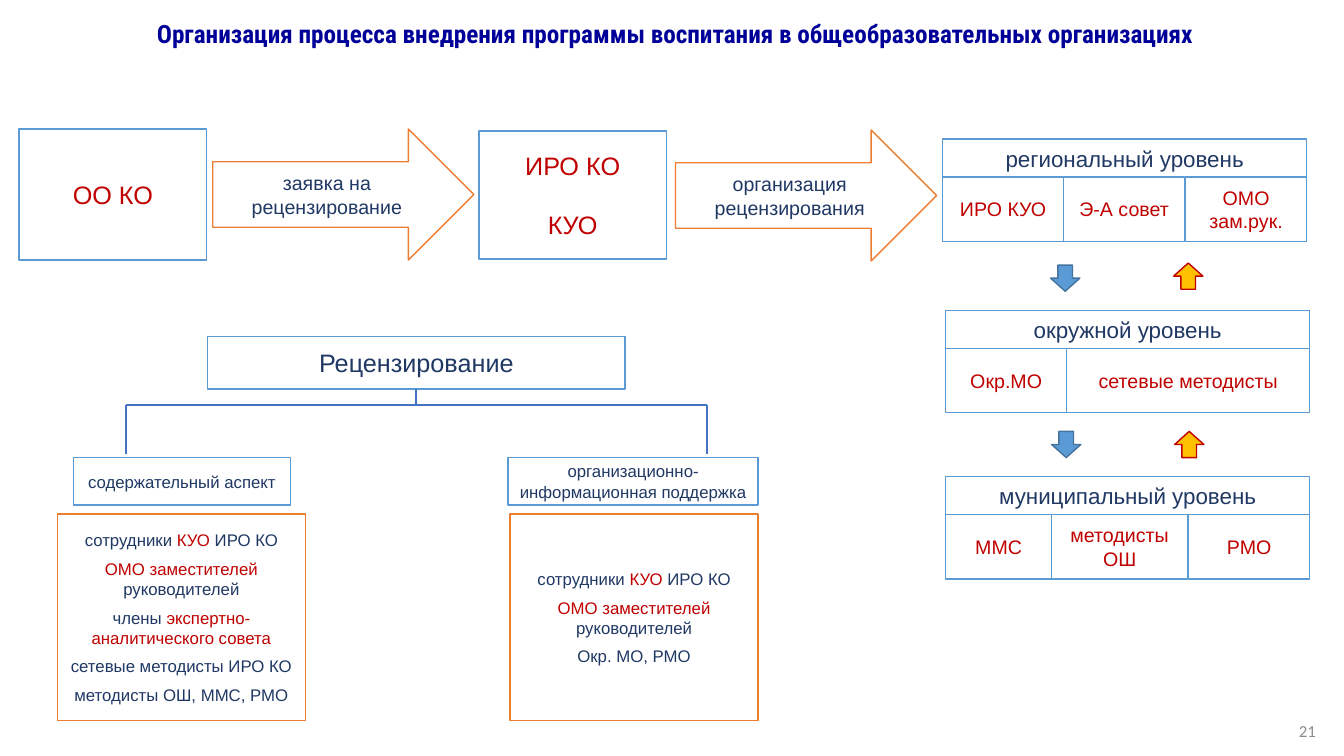
import pptx
import pptx.util
import pptx.dml.color
import pptx.enum.shapes
import pptx.enum.text
import pptx.oxml
import pptx.oxml.ns
from dataclasses import dataclass

Inches = pptx.util.Inches
Kind = pptx.enum.shapes.MSO_SHAPE
Align = pptx.enum.text.PP_ALIGN
Anchor = pptx.enum.text.MSO_ANCHOR


@dataclass(frozen=True)
class Theme:
    white: str = "FFFFFF"
    blue: str = "5B9BD5"
    edge: str = "43739E"
    link: str = "4472C4"
    orange: str = "ED7D31"
    gold: str = "FFC000"
    red: str = "C00000"
    navy: str = "203864"
    head: str = "000099"
    gray: str = "8C8C8C"
    font: str = "Arial"
    headfont: str = "Roboto Condensed"
    numfont: str = "Calibri"
    big: int = 18
    mid: int = 16
    body: int = 14
    small: int = 12


class Board:
    def __init__(self, slide, theme):
        self.slide = slide
        self.theme = theme

    def color(self, code):
        return pptx.dml.color.RGBColor.from_string(code)

    def style(self, run, size, code, font=None, bold=False):
        run.font.size = pptx.util.Pt(size)
        run.font.name = font or self.theme.font
        run.font.bold = bold
        run.font.color.rgb = self.color(code)

    def title(self, text, left, top, width, height):
        box = self.slide.shapes.title
        box.left, box.top = Inches(left), Inches(top)
        box.width, box.height = Inches(width), Inches(height)
        frame = box.text_frame
        frame.text = text
        frame.word_wrap = True
        frame.vertical_anchor = Anchor.TOP
        para = frame.paragraphs[0]
        para.alignment = Align.CENTER
        para.line_spacing = 1.0
        self.style(para.runs[0], self.theme.big, self.theme.head, self.theme.headfont, True)

    def number(self, text, left, top, width, height):
        box = self.slide.shapes.add_textbox(*map(Inches, (left, top, width, height)))
        frame = box.text_frame
        frame.text = text
        frame.word_wrap = True
        frame.vertical_anchor = Anchor.MIDDLE
        frame.paragraphs[0].alignment = Align.RIGHT
        self.style(frame.paragraphs[0].runs[0], self.theme.small, self.theme.gray, self.theme.numfont)

    def shape(self, kind, left, top, width, height, fill, line):
        item = self.slide.shapes.add_shape(kind, *map(Inches, (left, top, width, height)))
        item.shadow.inherit = False
        item.fill.solid()
        item.fill.fore_color.rgb = self.color(fill)
        item.line.color.rgb = self.color(line)
        item.line.width = pptx.util.Pt(1)
        return item

    def label(self, text, left, top, width, height, size, code, kind=Kind.RECTANGLE, line=None, gap=0):
        item = self.shape(kind, left, top, width, height, self.theme.white, line or self.theme.blue)
        frame = item.text_frame
        frame.text = text
        frame.word_wrap = True
        frame.vertical_anchor = Anchor.MIDDLE
        for index, para in enumerate(frame.paragraphs):
            para.alignment = Align.CENTER
            para.space_before = pptx.util.Pt(gap if index else 0)
            self.style(para.runs[0], size, code)
        return item

    def staff(self, rows, left, top, width, height):
        item = self.shape(Kind.RECTANGLE, left, top, width, height, self.theme.white, self.theme.orange)
        frame = item.text_frame
        frame.word_wrap = True
        frame.vertical_anchor = Anchor.MIDDLE
        for index, row in enumerate(rows):
            para = frame.add_paragraph() if index else frame.paragraphs[0]
            para.alignment = Align.CENTER
            para.space_after = pptx.util.Pt(6)
            for place, part in enumerate(row.split("|")):
                if part:
                    run = para.add_run()
                    run.text = part
                    self.style(run, self.theme.small, self.theme.red if place % 2 else self.theme.navy)

    def level(self, name, left, top, cells):
        self.label(name, left, top, 3.61, 0.38, self.theme.mid, self.theme.navy)
        for text, shift, width in cells:
            self.label(text, left + shift, top + 0.375, width, 0.64, self.theme.body, self.theme.red)

    def line(self, start, end, source=None):
        item = self.slide.shapes.add_connector(
            pptx.enum.shapes.MSO_CONNECTOR.STRAIGHT, *map(Inches, start + end))
        item.line.color.rgb = self.color(self.theme.link)
        item.line.width = pptx.util.Pt(1.5)
        props = item._element.spPr
        props.append(pptx.oxml.parse_xml("<a:effectLst %s/>" % pptx.oxml.ns.nsdecls("a")))
        if source is not None:
            item.begin_connect(source, 2)


def main():
    deck = pptx.Presentation()
    deck.slide_width, deck.slide_height = Inches(13.33), Inches(7.5)
    look = Theme()
    board = Board(deck.slides.add_slide(deck.slide_layouts[5]), look)

    board.title("Организация процесса внедрения программы воспитания в общеобразовательных организациях",
                0.4, 0.13, 12.59, 0.4)
    board.number("21", 10.15, 7.05, 3, 0.4)

    board.label("ОО КО", 0.19, 1.28, 1.86, 1.3, look.big, look.red)
    board.label("ИРО КО\nКУО", 4.75, 1.3, 1.86, 1.27, look.big, look.red, gap=21)
    for text, left, top in (("заявка на рецензирование", 2.11, 1.28),
                            ("организация рецензирования", 6.7, 1.29)):
        board.label(text, left, top, 2.59, 1.3, look.body, look.navy, Kind.RIGHT_ARROW, look.orange)

    levels = (
        ("региональный уровень", 9.35, 1.38,
         (("ИРО КУО", 0, 1.2), ("Э-А совет", 1.2, 1.2), ("ОМО зам.рук.", 2.41, 1.2))),
        ("окружной уровень", 9.38, 3.08,
         (("Окр.МО", 0, 1.2), ("сетевые методисты", 1.2, 2.41))),
        ("муниципальный уровень", 9.38, 4.73,
         (("ММС", 0, 1.05), ("методисты ОШ", 1.05, 1.35), ("РМО", 2.41, 1.2))),
    )
    for level in levels:
        board.level(*level)
    for left, down, up in ((10.42, 2.63, 2.61), (10.43, 4.28, 4.28)):
        board.shape(Kind.DOWN_ARROW, left, down, 0.29, 0.26, look.blue, look.edge)
        board.shape(Kind.UP_ARROW, left + 1.22, up, 0.29, 0.26, look.gold, look.red)

    review = board.label("Рецензирование", 2.06, 3.34, 4.14, 0.52, look.big, look.navy)
    board.line((4.13, 3.86), (4.13, 4.02), review)
    board.line((1.25, 4.02), (7.01, 4.02))
    for left in (1.25, 7.01):
        board.line((left, 4.02), (left, 4.5))

    shared = ["сотрудники |КУО| ИРО КО", "|ОМО заместителей |руководителей"]
    content = shared + ["члены |экспертно-аналитического совета",
                        "сетевые методисты ИРО КО", "методисты ОШ, ММС, РМО"]
    support = shared + ["Окр. МО, РМО"]
    branches = (("содержательный аспект", 0.73, 2.15, content, 0.57),
                ("организационно-информационная поддержка", 5.04, 2.48, support, 5.06))
    for text, left, width, rows, edge in branches:
        board.label(text, left, 4.54, width, 0.47, look.small, look.navy)
        board.staff(rows, edge, 5.1, 2.46, 2.05)

    deck.save("out.pptx")


if __name__ == "__main__":
    main()
